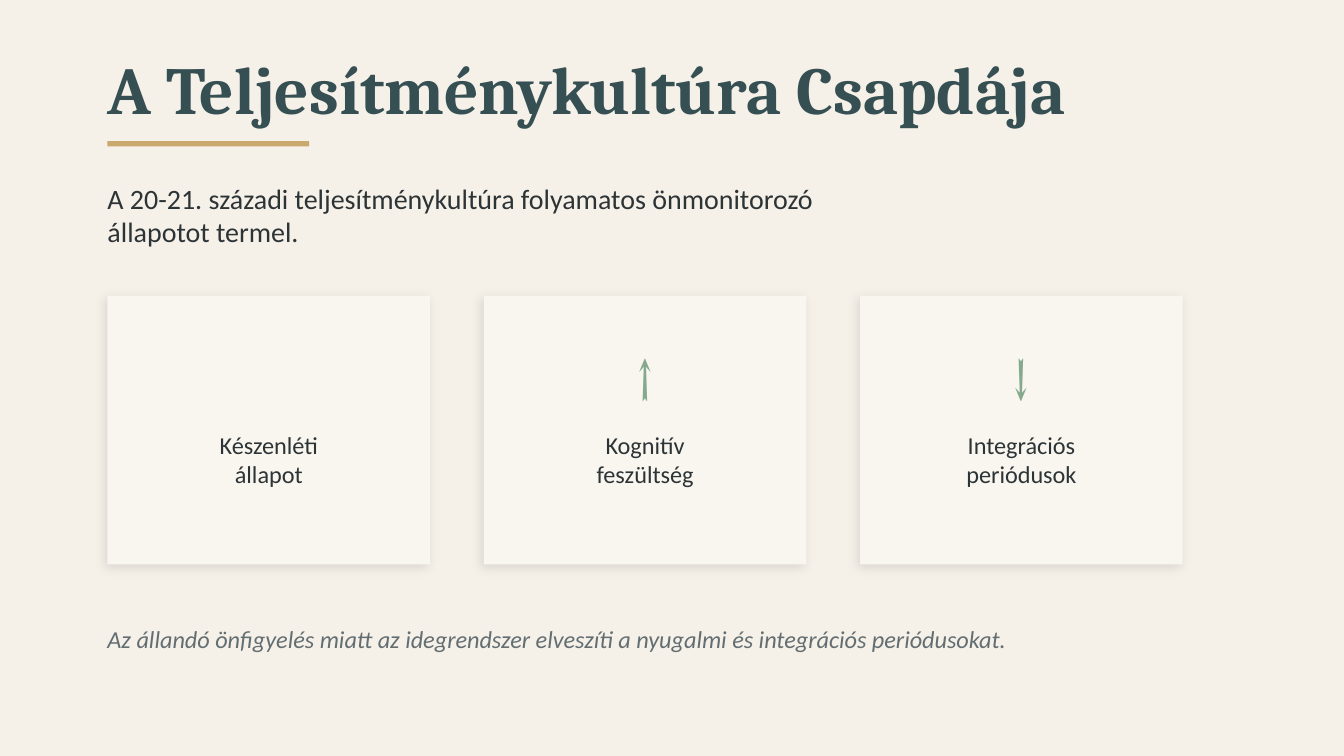
from dataclasses import dataclass

from lxml import etree
from pptx import Presentation
from pptx import util as u
from pptx.dml.color import RGBColor
from pptx.enum import shapes, text
from pptx.oxml import ns


@dataclass(frozen=True)
class Theme:
    background: str = "F5F0E8"
    card: str = "F9F6F0"
    heading: str = "354F52"
    accent: str = "C9A96E"
    symbol: str = "84A98C"
    body: str = "2D3436"
    muted: str = "636E72"
    shadow: str = "000000"
    heading_font: str = "Cambria"
    body_font: str = "Calibri"
    heading_size: int = 36
    lead_size: int = 15
    small_size: int = 13


class SlideBuilder:
    """Draws styled elements on the current slide."""

    def __init__(self, page, theme):
        self.page = page
        self.theme = theme
        self.paint(page.background.fill, theme.background)

    def paint(self, fill, color):
        fill.solid()
        fill.fore_color.rgb = RGBColor.from_string(color)

    def rectangle(self, left, top, width, height, color):
        box = self.page.shapes.add_shape(
            shapes.MSO_SHAPE.RECTANGLE, *map(u.Inches, (left, top, width, height)))
        box.shadow.inherit = False
        self.paint(box.fill, color)
        box.line.fill.background()
        return box

    def soft_shadow(self, box):
        effects = box._element.spPr.find(ns.qn("a:effectLst"))
        shadow = etree.SubElement(
            effects, ns.qn("a:outerShdw"), blurRad=str(u.Pt(6)), dist=str(u.Pt(2)),
            dir=str(135 * 60000), algn="bl", rotWithShape="0")
        color = etree.SubElement(shadow, ns.qn("a:srgbClr"), val=self.theme.shadow)
        etree.SubElement(color, ns.qn("a:alpha"), val="10000")

    def label(self, left, top, width, height, lines, size, color, font=None,
              bold=False, italic=False, align=text.PP_ALIGN.LEFT,
              anchor=text.MSO_ANCHOR.MIDDLE):
        box = self.page.shapes.add_textbox(*map(u.Inches, (left, top, width, height)))
        frame = box.text_frame
        frame.word_wrap = True
        frame.vertical_anchor = anchor
        frame.margin_left = frame.margin_right = 0
        frame.margin_top = frame.margin_bottom = 0
        frame.text = "\n".join(lines)
        for para in frame.paragraphs:
            para.alignment = align
            para.font.name = font or self.theme.body_font
            para.font.size = u.Pt(size)
            para.font.bold = bold
            para.font.italic = italic
            para.font.color.rgb = RGBColor.from_string(color)

    def card(self, left, top, width, height, symbol, lines):
        theme = self.theme
        self.soft_shadow(self.rectangle(left, top, width, height, theme.card))
        if symbol:
            self.label(left, top + 0.2, width, 0.8, [symbol], theme.heading_size,
                       theme.symbol, theme.heading_font, bold=True,
                       align=text.PP_ALIGN.CENTER)
        self.label(left, top + 1, width, 0.8, lines, theme.small_size, theme.body,
                   align=text.PP_ALIGN.CENTER, anchor=text.MSO_ANCHOR.TOP)


def main():
    deck = Presentation()
    deck.slide_width = u.Inches(10)
    deck.slide_height = deck.slide_width * 9 // 16
    theme = Theme()
    slide = SlideBuilder(deck.slides.add_slide(deck.slide_layouts[6]), theme)

    margin, content_width = 0.8, 8.4
    slide.label(margin, 0.3, content_width, 0.7, ["A Teljesítménykultúra Csapdája"],
                theme.heading_size, theme.heading, theme.heading_font, bold=True)
    slide.rectangle(margin, 1.05, 1.5, 0.04, theme.accent)
    slide.label(margin, 1.3, 5.5, 0.6,
                ["A 20-21. századi teljesítménykultúra folyamatos önmonitorozó "
                 "állapotot termel."], theme.lead_size, theme.body)

    card_width, gap = 2.4, 0.4
    cards = [
        (None, ["Készenléti", "állapot"]),
        ("↑", ["Kognitív", "feszültség"]),
        ("↓", ["Integrációs", "periódusok"]),
    ]
    for index, (symbol, lines) in enumerate(cards):
        left = margin + index * (card_width + gap)
        slide.card(left, 2.2, card_width, 2, symbol, lines)

    slide.label(margin, 4.5, content_width, 0.5,
                ["Az állandó önfigyelés miatt az idegrendszer elveszíti a nyugalmi "
                 "és integrációs periódusokat."],
                theme.small_size, theme.muted, italic=True)
    deck.save("out.pptx")


if __name__ == "__main__":
    main()
